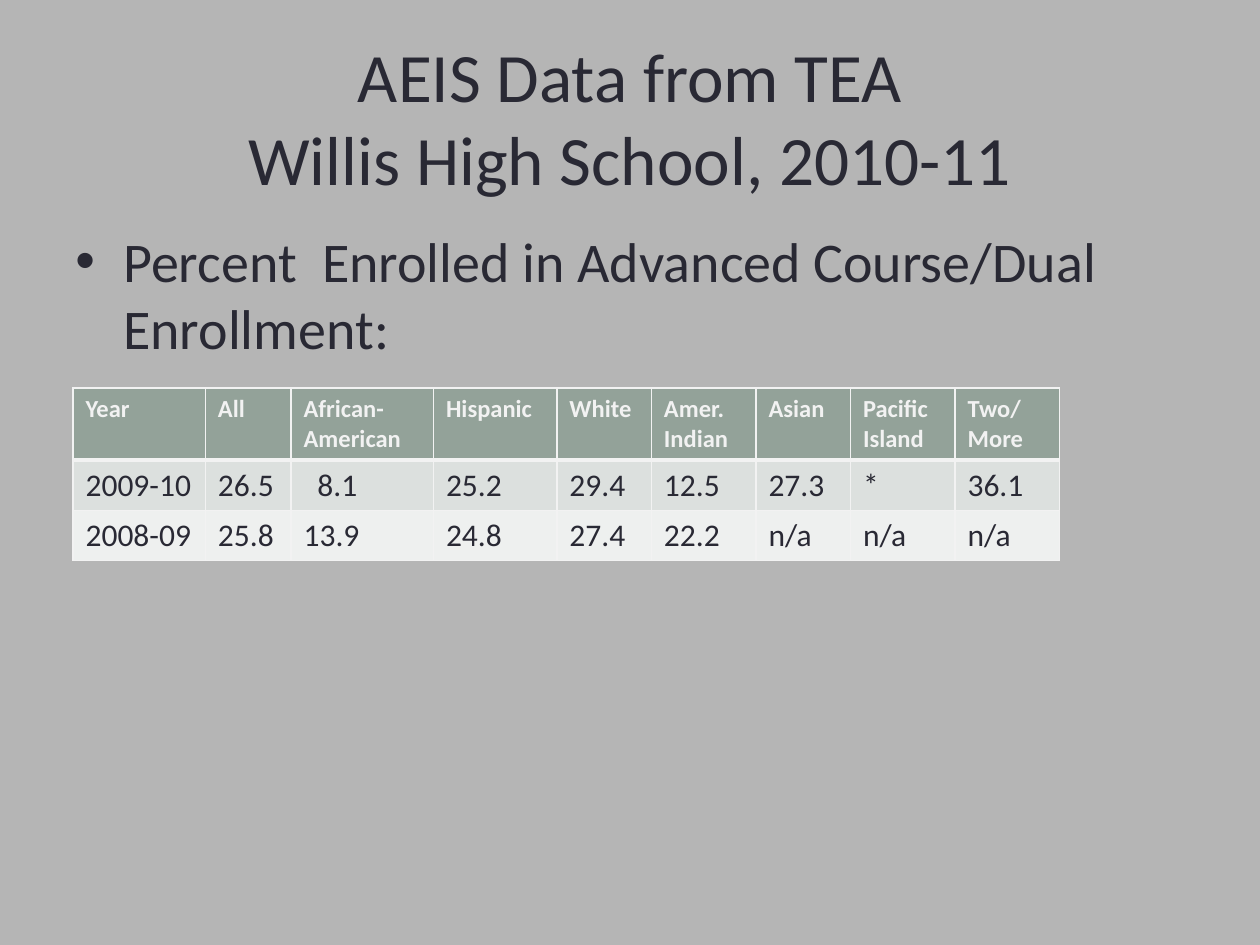
from lxml import etree
from pptx import Presentation
from pptx.dml.color import RGBColor
from pptx.enum.text import MSO_ANCHOR as Anchor, PP_ALIGN as Align
from pptx.oxml.ns import qn
from pptx.util import Inches, Pt

INK = "292934"
LIGHT = "F2F2F2"
GRAY = "B5B5B5"
GREEN = "93A299"
ROW_FILLS = [GREEN, "DCE0DE", "EEF0EF"]


def color(hex_string):
    return RGBColor.from_string(hex_string)


def write_text(text_frame, text, size, ink=INK, bold=False, align=Align.LEFT):
    """Write one paragraph per line; a vertical tab breaks a line inside a paragraph."""
    text_frame.text = text
    text_frame.word_wrap = True
    for paragraph in text_frame.paragraphs:
        paragraph.alignment = align
        for run in paragraph.runs:
            run.font.name = "Calibri"
            run.font.size = Pt(size)
            run.font.bold = bold
            run.font.color.rgb = color(ink)


presentation = Presentation()
presentation.slide_width = Inches(10)
presentation.slide_height = Inches(7.5)
slide = presentation.slides.add_slide(presentation.slide_layouts[6])
slide.background.fill.solid()
slide.background.fill.fore_color.rgb = color(GRAY)

# Title
title = slide.shapes.add_textbox(Inches(0.5), Inches(0.3), Inches(9), Inches(1.25))
title.text_frame.vertical_anchor = Anchor.MIDDLE
write_text(title.text_frame, "AEIS Data from TEA\vWillis High School, 2010-11",
           size=39.6, align=Align.CENTER)

# Bulleted statement
body = slide.shapes.add_textbox(Inches(0.5), Inches(1.75), Inches(9), Inches(4.95))
write_text(body.text_frame, "Percent  Enrolled in Advanced Course/Dual Enrollment:", size=32)
properties = body.text_frame.paragraphs[0]._p.get_or_add_pPr()
properties.set("marL", str(Inches(0.38)))
properties.set("indent", str(Inches(-0.38)))
etree.SubElement(properties, qn("a:buFont"), typeface="Arial")
etree.SubElement(properties, qn("a:buChar"), char="•")

# Enrollment table
rows = [
    ["Year", "All", "African-\nAmerican", "Hispanic", "White", "Amer.\nIndian",
     "Asian", "Pacific\nIsland", "Two/\nMore"],
    ["2009-10", "26.5", "8.1", "25.2", "29.4", "12.5", "27.3", "*", "36.1"],
    ["2008-09", "25.8", "13.9", "24.8", "27.4", "22.2", "n/a", "n/a", "n/a"],
]
column_widths = [1.05, 0.68, 1.13, 0.98, 0.75, 0.83, 0.75, 0.83, 0.83]
row_heights = [0.57, 0.4, 0.4]
table = slide.shapes.add_table(
    len(rows), len(column_widths), Inches(0.58), Inches(3.08),
    Inches(sum(column_widths)), Inches(sum(row_heights))).table
for column, width in zip(table.columns, column_widths):
    column.width = Inches(width)

for row_index, values in enumerate(rows):
    table.rows[row_index].height = Inches(row_heights[row_index])
    is_header = row_index == 0
    for column_index, value in enumerate(values):
        cell = table.cell(row_index, column_index)
        write_text(cell.text_frame, value, size=14 if is_header else 18,
                   ink=LIGHT if is_header else INK, bold=is_header)
        cell_properties = cell._tc.get_or_add_tcPr()
        for side in ("lnL", "lnR", "lnT", "lnB"):
            heavy = (row_index, side) in [(0, "lnB"), (1, "lnT")]
            line = etree.SubElement(cell_properties, qn(f"a:{side}"),
                                    w=str(Pt(3 if heavy else 1)))
            line_fill = etree.SubElement(line, qn("a:solidFill"))
            etree.SubElement(line_fill, qn("a:srgbClr"), val=LIGHT)
        cell.fill.solid()
        cell.fill.fore_color.rgb = color(ROW_FILLS[row_index])

# The one-digit value is indented to line up with the value below it
table.cell(1, 2).margin_left = Inches(0.21)

presentation.save("out.pptx")
